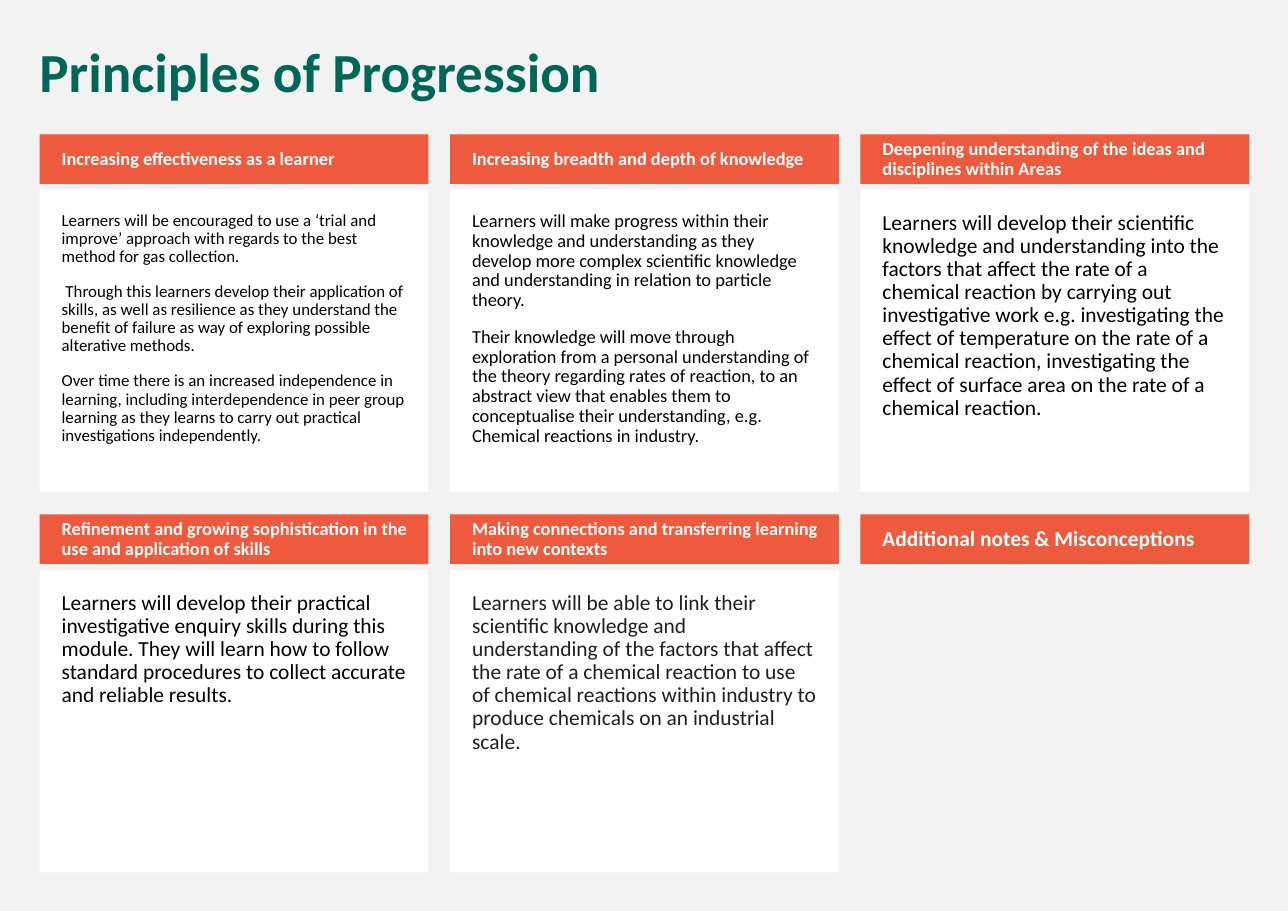
from dataclasses import dataclass

from pptx import Presentation
from pptx.dml.color import RGBColor
from pptx.enum.shapes import MSO_SHAPE
from pptx.enum.text import MSO_ANCHOR, PP_ALIGN
from pptx.util import Inches, Pt


@dataclass(frozen=True)
class Theme:
    font: str = "Calibri"
    page: str = "F2F2F2"
    title: str = "006758"
    header: str = "ED5A3E"
    panel: str = "FFFFFF"
    light: str = "FFFFFF"
    text: str = "000000"
    soft: str = "1F1F1F"
    title_size: int = 36
    large: int = 14
    medium: int = 12
    small: int = 11


# Grid of cards, in inches: three columns, two rows
LEFT, TOP, RIGHT, BOTTOM = 0.36, 1.22, 11.34, 7.92
CARD_W, HEADER_H, PANEL_H, PANEL_DROP = 3.53, 0.45, 2.75, 0.5
COL_STEP = (RIGHT - LEFT - CARD_W) / 2
ROW_STEP = BOTTOM - TOP - PANEL_DROP - PANEL_H
HEADER_INSETS = (0.2, 0.05, 0.1, 0.05)
PANEL_INSETS = (0.2, 0.2, 0.2, 0.2)


class Board:
    def __init__(self, prs, theme):
        self.theme = theme
        self.s = prs.slides.add_slide(prs.slide_layouts[6])
        fill = self.s.background.fill
        fill.solid()
        fill.fore_color.rgb = RGBColor.from_string(theme.page)

    def set_text(self, sp, paragraphs, size, color, bold=False,
                 anchor=MSO_ANCHOR.TOP, insets=(0.1, 0.05, 0.1, 0.05)):
        tf = sp.text_frame
        frame = {"word_wrap": True, "vertical_anchor": anchor}
        for side, inset in zip(("left", "top", "right", "bottom"), insets):
            frame[f"margin_{side}"] = Inches(inset)
        for name, value in frame.items():
            setattr(tf, name, value)
        para = {"alignment": PP_ALIGN.LEFT, "line_spacing": 0.9, "space_before": Pt(11)}
        font = {"name": self.theme.font, "size": Pt(size), "bold": bold}
        for i, text in enumerate(paragraphs):
            p = tf.add_paragraph() if i else tf.paragraphs[0]
            for name, value in para.items():
                setattr(p, name, value)
            r = p.add_run()
            r.text = text
            for name, value in font.items():
                setattr(r.font, name, value)
            r.font.color.rgb = RGBColor.from_string(color)

    def title(self, text):
        sp = self.s.shapes.add_textbox(*map(Inches, (LEFT - 0.1, 0.36, RIGHT - LEFT + 0.1, 0.65)))
        self.set_text(sp, [text], self.theme.title_size, self.theme.title, bold=True)

    def box(self, col, row, drop, height, fill):
        place = (LEFT + col * COL_STEP, TOP + row * ROW_STEP + drop, CARD_W, height)
        sp = self.s.shapes.add_shape(MSO_SHAPE.RECTANGLE, *map(Inches, place))
        sp.shadow.inherit = False
        sp.fill.solid()
        sp.fill.fore_color.rgb = RGBColor.from_string(fill)
        sp.line.fill.background()
        return sp

    def header(self, col, row, text, size):
        sp = self.box(col, row, 0, HEADER_H, self.theme.header)
        self.set_text(sp, [text], size, self.theme.light, bold=True,
                      anchor=MSO_ANCHOR.MIDDLE, insets=HEADER_INSETS)

    def panel(self, col, row, paragraphs, size, color):
        sp = self.box(col, row, PANEL_DROP, PANEL_H, self.theme.panel)
        self.set_text(sp, paragraphs, size, color, insets=PANEL_INSETS)


THEME = Theme()

# Cards in reading order: heading, heading size, paragraphs, text size, text colour
CARDS = [
    ("Increasing effectiveness as a learner", THEME.medium, [
        "Learners will be encouraged to use a ‘trial and improve’ approach with "
        "regards to the best method for gas collection.",
        " Through this learners develop their application of skills, as well as "
        "resilience as they understand the benefit of failure as way of exploring "
        "possible alterative methods.",
        "Over time there is an increased independence in learning, including "
        "interdependence in peer group learning as they learns to carry out "
        "practical investigations independently.",
    ], THEME.small, THEME.text),
    ("Increasing breadth and depth of knowledge", THEME.medium, [
        "Learners will make progress within their knowledge and understanding as "
        "they develop more complex scientific knowledge and understanding in "
        "relation to particle theory.",
        "Their knowledge will move through exploration from a "
        "personal understanding of the theory regarding rates of reaction, to an "
        "abstract view that enables them to conceptualise their understanding, "
        "e.g. Chemical reactions in industry.",
    ], THEME.medium, THEME.text),
    ("Deepening understanding of the ideas and disciplines within Areas", THEME.medium, [
        "Learners will develop their scientific knowledge and understanding "
        "into the factors that affect the rate of a chemical reaction by carrying "
        "out investigative work e.g. investigating the effect of temperature on the "
        "rate of a chemical reaction, investigating the effect of surface area on "
        "the rate of a chemical reaction.",
    ], THEME.large, THEME.text),
    ("Refinement and growing sophistication in the use and application of skills",
     THEME.medium, [
         "Learners will develop their practical investigative enquiry skills during "
         "this module. They will learn how to follow standard procedures to collect "
         "accurate and reliable results.",
     ], THEME.large, THEME.text),
    ("Making connections and transferring learning into new contexts", THEME.medium, [
        "Learners will be able to link their scientific knowledge and understanding "
        "of the factors that affect the rate of a chemical reaction to use of chemical "
        "reactions within industry to produce chemicals on an industrial scale.",
    ], THEME.large, THEME.soft),
    ("Additional notes & Misconceptions", THEME.large, [], THEME.large, THEME.text),
]


def main():
    prs = Presentation()
    prs.slide_width, prs.slide_height = Inches(11.69), Inches(8.27)
    board = Board(prs, THEME)

    # Title
    board.title("Principles of Progression")

    # Cards; the last has a heading only
    for i, (heading, heading_size, paragraphs, size, color) in enumerate(CARDS):
        row, col = divmod(i, 3)
        if paragraphs:
            board.panel(col, row, paragraphs, size, color)
        board.header(col, row, heading, heading_size)

    prs.save("out.pptx")


if __name__ == "__main__":
    main()
